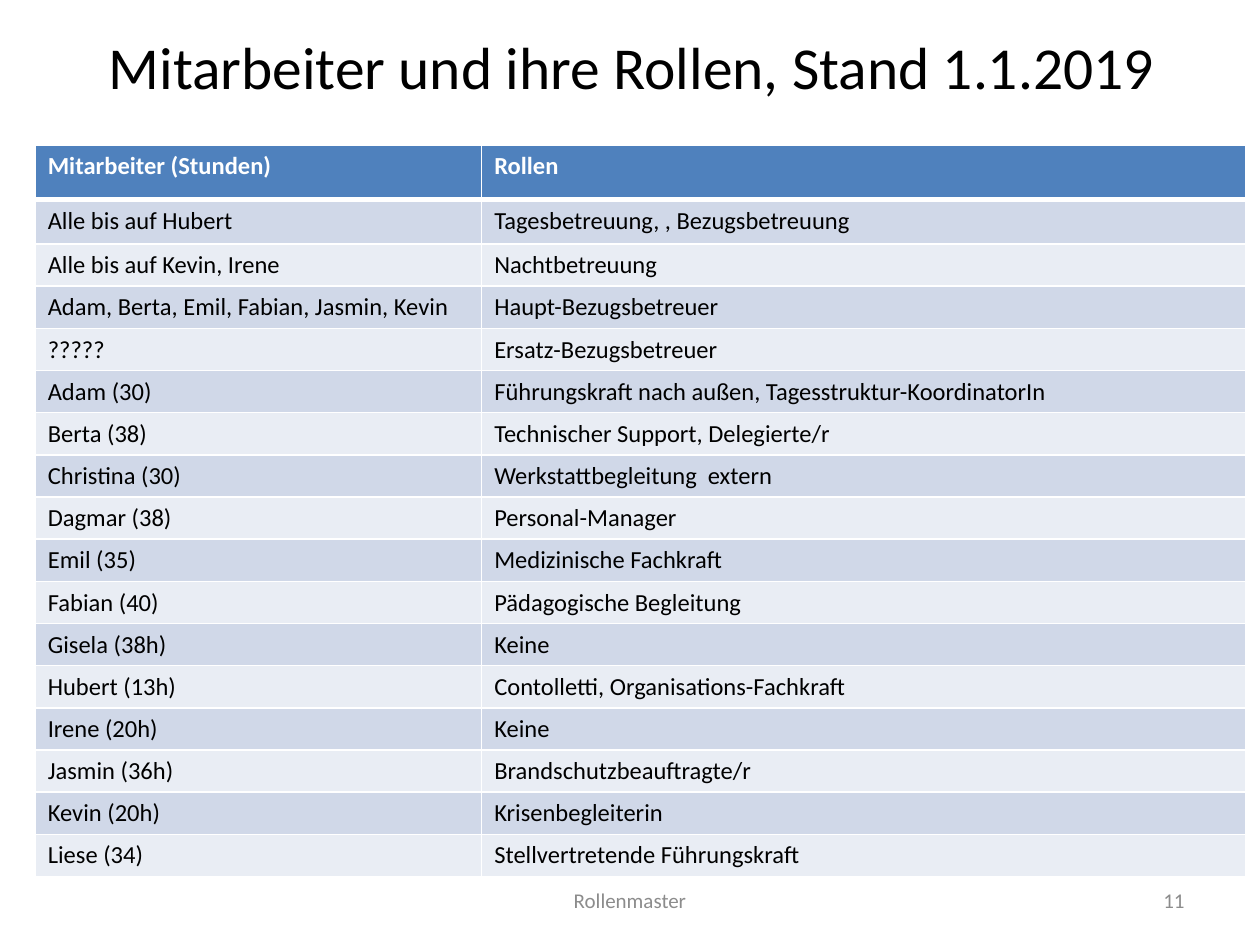
"""Build a slide with a table of staff members and their roles."""
import lxml.etree
import pptx
import pptx.dml.color
import pptx.enum.text
import pptx.oxml.ns
import pptx.util

Cm = pptx.util.Cm
Pt = pptx.util.Pt
ALIGN = pptx.enum.text.PP_ALIGN
FONT = "Calibri"
COLORS = {
    "text": "000000",
    "white": "FFFFFF",
    "head": "4F81BD",
    "odd": "D0D8E8",
    "even": "E9EDF4",
    "foot": "8C8C8C",
}
ROWS = [
    ("Mitarbeiter (Stunden)", "Rollen"),
    ("Alle bis auf Hubert", "Tagesbetreuung, , Bezugsbetreuung"),
    ("Alle bis auf Kevin, Irene", "Nachtbetreuung"),
    ("Adam, Berta, Emil, Fabian, Jasmin, Kevin", "Haupt-Bezugsbetreuer"),
    ("?????", "Ersatz-Bezugsbetreuer"),
    ("Adam (30)", "Führungskraft nach außen, Tagesstruktur-KoordinatorIn"),
    ("Berta (38)", "Technischer Support, Delegierte/r"),
    ("Christina (30)", "Werkstattbegleitung  extern"),
    ("Dagmar (38)", "Personal-Manager"),
    ("Emil (35)", "Medizinische Fachkraft"),
    ("Fabian (40)", "Pädagogische Begleitung"),
    ("Gisela (38h)", "Keine"),
    ("Hubert (13h)", "Contolletti, Organisations-Fachkraft"),
    ("Irene (20h)", "Keine"),
    ("Jasmin (36h)", "Brandschutzbeauftragte/r"),
    ("Kevin (20h)", "Krisenbegleiterin"),
    ("Liese (34)", "Stellvertretende Führungskraft"),
]


def style(para, size, color, bold=False):
    para.font.name = FONT
    para.font.size = Pt(size)
    para.font.bold = bold
    para.font.color.rgb = pptx.dml.color.RGBColor.from_string(COLORS[color])


def border(cell, side, width):
    qn = pptx.oxml.ns.qn
    props = cell._tc.get_or_add_tcPr()
    line = lxml.etree.SubElement(props, qn(f"a:ln{side}"), w=str(Pt(width)))
    fill = lxml.etree.SubElement(line, qn("a:solidFill"))
    lxml.etree.SubElement(fill, qn("a:srgbClr"), val=COLORS["white"])


deck = pptx.Presentation()
deck.slide_width = Cm(25.4)
deck.slide_height = Cm(19.05)
slide = deck.slides.add_slide(deck.slide_layouts[6])

labels = [
    ("Mitarbeiter und ihre Rollen, Stand 1.1.2019",
     (1.3, 0.33, 22.86, 2), 34, "text", ALIGN.CENTER),
    ("11", (18.2, 17.65, 5.93, 1.01), 12, "foot", ALIGN.RIGHT),
    ("Rollenmaster", (8.68, 17.65, 8.04, 1.01), 12, "foot", ALIGN.CENTER),
]
for text, place, size, color, align in labels:
    box = slide.shapes.add_textbox(*map(Cm, place))
    frame = box.text_frame
    frame.word_wrap = True
    frame.vertical_anchor = pptx.enum.text.MSO_ANCHOR.MIDDLE
    para = frame.paragraphs[0]
    para.text = text
    para.alignment = align
    style(para, size, color)

heights = [1.09, 0.9] + [0.85] * (len(ROWS) - 2)
table = slide.shapes.add_table(
    len(ROWS), 2, Cm(0.71), Cm(2.93), Cm(24.4), Cm(sum(heights))
).table
table.columns[0].width = Cm(9)
table.columns[1].width = Cm(15.4)

for i, (row, high) in enumerate(zip(ROWS, heights)):
    table.rows[i].height = Cm(high)
    head = i == 0
    shade = "head" if head else "odd" if i % 2 else "even"
    for j, text in enumerate(row):
        cell = table.cell(i, j)
        cell.text = text
        style(cell.text_frame.paragraphs[0], 14,
              "white" if head else "text", head)
        for side in "LRTB":
            thick = (head and side == "B") or (i == 1 and side == "T")
            border(cell, side, 3 if thick else 1)
        cell.fill.solid()
        cell.fill.fore_color.rgb = pptx.dml.color.RGBColor.from_string(
            COLORS[shade])

deck.save("out.pptx")
